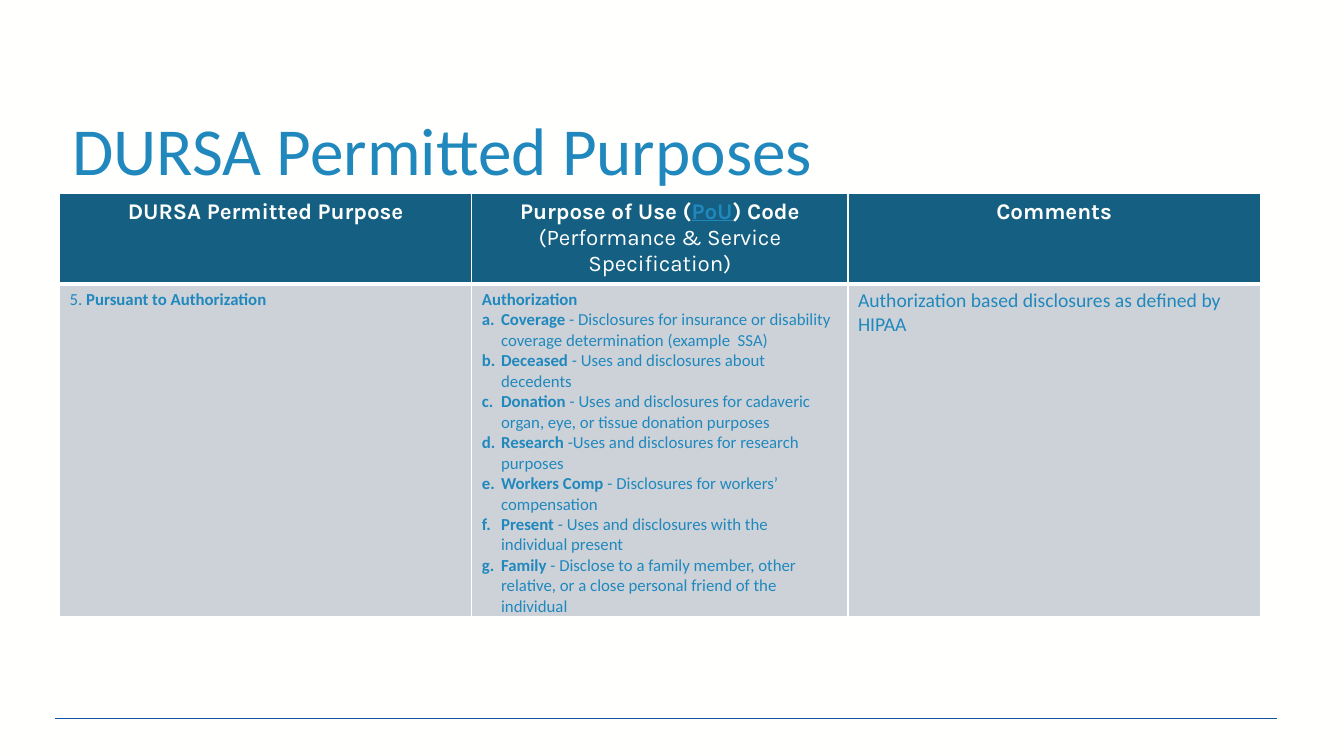
from lxml import etree
from pptx import Presentation
from pptx import util as u
from pptx.dml.color import RGBColor
from pptx.enum import shapes, text
from pptx.oxml import ns

PAPER = RGBColor(0xFF, 0xFF, 0xFE)
WHITE = RGBColor(0xFF, 0xFF, 0xFF)
BLUE = RGBColor(0x20, 0x88, 0xBD)
RULE_BLUE = RGBColor(0x13, 0x52, 0x9D)
HEADER_FILL = RGBColor(0x15, 0x60, 0x82)
BODY_FILL = RGBColor(0xCC, 0xD2, 0xD8)

HEADER = dict(size=u.Pt(16), name="Karla", bold=True, color=PAPER)
HEADER_PLAIN = HEADER | dict(bold=False)
HEADER_LINK = HEADER | dict(color=BLUE, underline=True)
BODY = dict(size=u.Pt(12), name="Calibri", bold=False, color=BLUE)
BODY_BOLD = BODY | dict(bold=True)
COMMENT = BODY | dict(size=u.Pt(14))
TITLE = BODY | dict(size=u.Pt(48))


def add_runs(paragraph, runs):
    for words, style in runs:
        run = paragraph.add_run()
        run.text = words
        for key, value in style.items():
            if key == "color":
                run.font.color.rgb = value
            else:
                setattr(run.font, key, value)


def add_element(parent, tag, **attributes):
    return etree.SubElement(parent, ns.qn(tag),
                            {key: str(value) for key, value in attributes.items()})


prs = Presentation()
prs.slide_width, prs.slide_height = u.Inches(13.33), u.Inches(7.5)
slide = prs.slides.add_slide(prs.slide_layouts[6])
slide.background.fill.solid()
slide.background.fill.fore_color.rgb = PAPER

# Footer rule
rule_y = u.Inches(7.13)
footer_rule = slide.shapes.add_connector(
    shapes.MSO_CONNECTOR.STRAIGHT, u.Inches(0.55), rule_y, u.Inches(12.67), rule_y)
footer_rule.line.color.rgb = RULE_BLUE
footer_rule.line.width = u.Pt(0.5)
add_element(footer_rule._element.spPr, "a:effectLst")

# Title
title = slide.shapes.add_textbox(
    u.Inches(0.67), u.Inches(0.81), u.Inches(12), u.Inches(1.09)).text_frame
title_format = dict(word_wrap=True, vertical_anchor=text.MSO_ANCHOR.BOTTOM,
                    margin_left=u.Inches(0.05), margin_bottom=u.Inches(0.03))
for key, value in title_format.items():
    setattr(title, key, value)
add_runs(title.paragraphs[0], [("DURSA Permitted Purposes", TITLE)])

# Table content: each cell is a list of paragraphs, each paragraph a list of runs
authorization_codes = [
    ("Coverage", " - Disclosures for insurance or disability coverage determination (example  SSA)"),
    ("Deceased", " - Uses and disclosures about decedents"),
    ("Donation ", "- Uses and disclosures for cadaveric organ, eye, or tissue donation purposes"),
    ("Research ", "-Uses and disclosures for research purposes"),
    ("Workers Comp ", "- Disclosures for workers’ compensation"),
    ("Present", " - Uses and disclosures with the individual present"),
    ("Family", " - Disclose to a family member, other relative, or a close personal friend of the individual"),
]
header_row = [
    [[("DURSA Permitted Purpose", HEADER)]],
    [[("Purpose of Use (", HEADER), ("PoU", HEADER_LINK), (") Code ", HEADER),
      ("(Performance & Service Specification)", HEADER_PLAIN)]],
    [[("Comments", HEADER)]],
]
purpose_row = [
    [[("5. ", BODY), ("Pursuant to Authorization", BODY_BOLD)]],
    [[("Authorization", BODY_BOLD)]]
    + [[(code, BODY_BOLD), (meaning, BODY)] for code, meaning in authorization_codes],
    [[("Authorization based disclosures as defined by HIPAA", COMMENT)]],
]

# Table grid
table_frame = slide.shapes.add_table(
    2, 3, u.Inches(0.59), u.Inches(1.92), u.Inches(11.92), u.Inches(4.6))
purposes = table_frame.table
for column, width in zip(purposes.columns, (4.09, 3.73, 4.09)):
    column.width = u.Inches(width)
for row, height in zip(purposes.rows, (0.57, 0.43)):
    row.height = u.Inches(height)
table_frame.height = u.Inches(4.6)

# Cells: the border between header and body is the heavy one
row_formats = [
    (header_row, HEADER_FILL, text.PP_ALIGN.CENTER, dict(L=1, R=1, T=1, B=3)),
    (purpose_row, BODY_FILL, text.PP_ALIGN.LEFT, dict(L=1, R=1, T=3, B=1)),
]
for row, (contents, fill, alignment, borders) in enumerate(row_formats):
    for column, paragraphs in enumerate(contents):
        cell = purposes.cell(row, column)
        cell_properties = cell._tc.get_or_add_tcPr()
        for side, weight in borders.items():
            border = add_element(cell_properties, f"a:ln{side}", w=u.Pt(weight))
            add_element(add_element(border, "a:solidFill"), "a:srgbClr", val=WHITE)
        cell.fill.solid()
        cell.fill.fore_color.rgb = fill
        for index, runs in enumerate(paragraphs):
            frame = cell.text_frame
            paragraph = frame.add_paragraph() if index else frame.paragraphs[0]
            paragraph.alignment = alignment
            if len(paragraphs) > 1:
                indent = u.Inches(0.19)
                properties = paragraph._p.get_or_add_pPr()
                if index:
                    properties.set("marL", str(indent))
                    properties.set("indent", str(-indent))
                    add_element(properties, "a:buAutoNum", type="alphaLcPeriod")
                tabs = add_element(properties, "a:tabLst")
                add_element(tabs, "a:tab", pos=indent, algn="l")
            add_runs(paragraph, runs)

prs.save("out.pptx")
